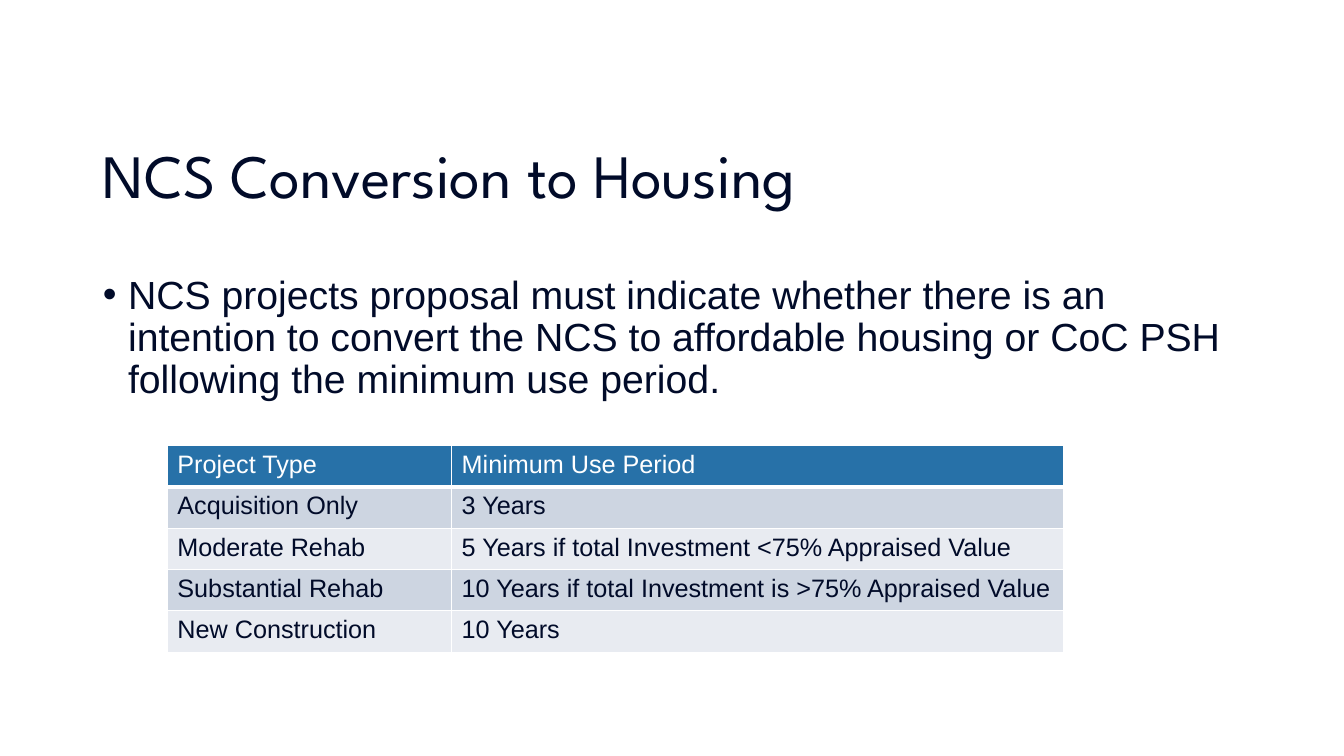
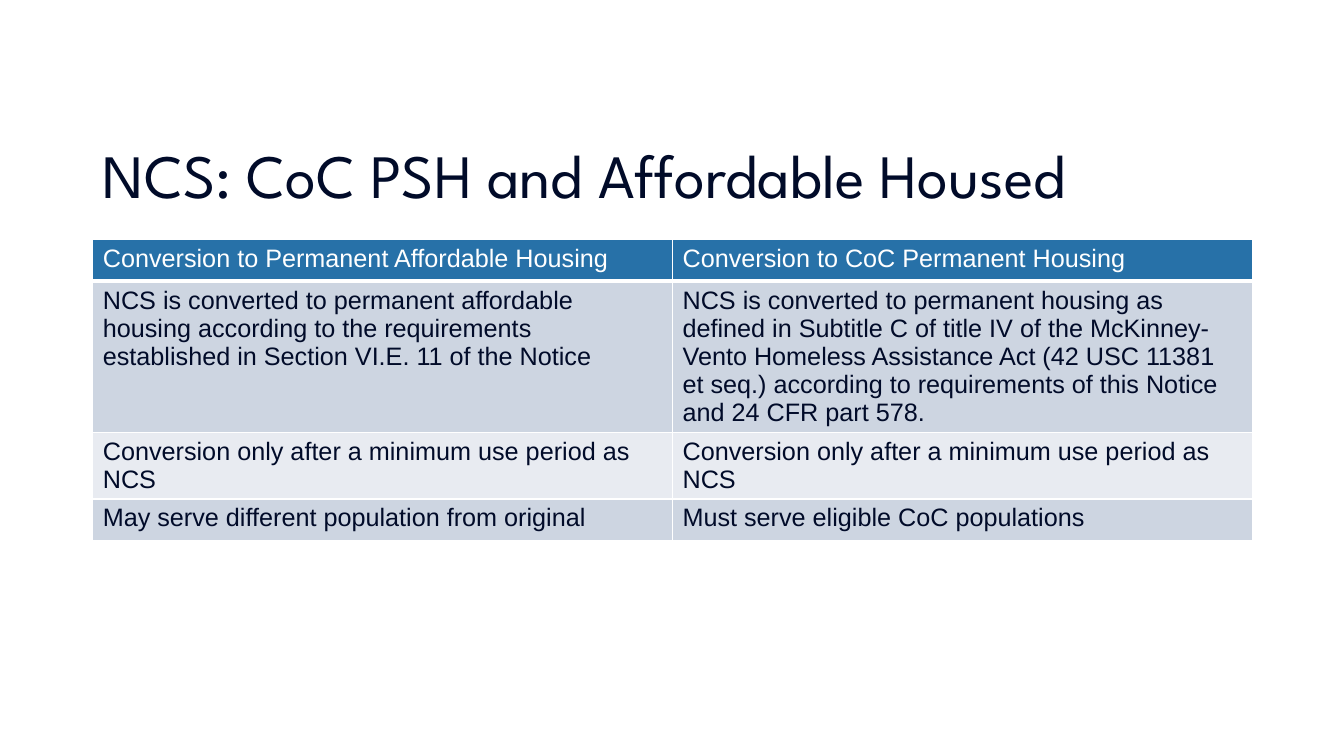
from dataclasses import dataclass

from lxml import etree
from pptx import Presentation
from pptx.dml.color import RGBColor
from pptx.enum.text import MSO_ANCHOR, MSO_AUTO_SIZE, PP_ALIGN
from pptx.oxml.ns import qn
from pptx.util import Inches, Pt

LEFT = PP_ALIGN.LEFT
MIDDLE, TOP = MSO_ANCHOR.MIDDLE, MSO_ANCHOR.TOP
NO_FIT = MSO_AUTO_SIZE.NONE

INK, WHITE, BLUE = "010B29", "FFFFFF", "2771A8"
BANDS = ("CDD5E1", "E8EBF1")
HEAD, TEXT = "League Spartan", "Arial"
EDGE, WIDTH = 0.92, 11.5
TITLE_ONLY, TITLE_BODY = 5, 1


@dataclass
class Grid:
    left: float
    top: float
    cols: tuple[float, ...]
    heights: tuple[float, ...]
    rows: list[tuple[str, ...]]


@dataclass
class Page:
    title: str
    grid: Grid
    bullet: str = ""


PAGES = [
    Page(
        "NCS Conversion to Housing",
        Grid(1.66, 4.42, (2.82, 6.07), (0.41,) * 5, [
            ("Project Type", "Minimum Use Period"),
            ("Acquisition Only", "3 Years"),
            ("Moderate Rehab",
             "5 Years if total Investment <75% Appraised Value"),
            ("Substantial Rehab",
             "10 Years if total Investment is >75% Appraised Value"),
            ("New Construction", "10 Years"),
        ]),
        "NCS projects proposal must indicate whether there is an intention "
        "to convert the NCS to affordable housing or CoC PSH following the "
        "minimum use period.",
    ),
    Page(
        "NCS: CoC PSH and Affordable Housed",
        Grid(EDGE, 2.38, (WIDTH / 2,) * 2, (0.41, 1.5, 0.66, 0.41), [
            ("Conversion to Permanent Affordable Housing",
             "Conversion to CoC Permanent Housing"),
            ("NCS is converted to permanent affordable housing according to "
             "the requirements established in Section VI.E. 11 of the Notice",
             "NCS is converted to permanent housing as defined in Subtitle C "
             "of title IV of the McKinney-Vento Homeless Assistance Act (42 "
             "USC 11381 et seq.) according to requirements of this Notice "
             "and 24 CFR part 578."),
            ("Conversion only after a minimum use period as NCS",) * 2,
            ("May serve different population from original",
             "Must serve eligible CoC populations"),
        ]),
    ),
]


def rgb(code: str) -> RGBColor:
    return RGBColor.from_string(code)


def style(para, face: str, size: float, color: str) -> None:
    para.alignment = LEFT
    para.font.name = face
    para.font.size = Pt(size)
    para.font.color.rgb = rgb(color)


def fill_holder(shape, text: str, top: float, height: float, anchor,
                face: str, size: float):
    """Place a placeholder, write its one paragraph and return it."""
    shape.left, shape.top = Inches(EDGE), Inches(top)
    shape.width, shape.height = Inches(WIDTH), Inches(height)
    frame = shape.text_frame
    frame.text = text
    frame.auto_size = NO_FIT
    frame.vertical_anchor = anchor
    para = frame.paragraphs[0]
    para.line_spacing = 0.9
    para.space_before = Pt(0)
    style(para, face, size, INK)
    return para


def add_bullet(slide, text: str) -> None:
    para = fill_holder(slide.placeholders[1], text, 2.68, 4.07, TOP, TEXT, 28)
    props = para._p.get_or_add_pPr()
    props.set("marL", str(Inches(0.25)))
    props.set("indent", str(Inches(-0.25)))


def add_edges(cell, base: float) -> None:
    """Draw white borders; base is the width of the bottom one in points."""
    props = cell._tc.get_or_add_tcPr()
    sides = {"lnL": 1, "lnR": 1, "lnT": 1, "lnB": base}
    for spot, (tag, width) in enumerate(sides.items()):
        line = etree.Element(qn(f"a:{tag}"), w=str(Pt(width)))
        solid = etree.SubElement(line, qn("a:solidFill"))
        etree.SubElement(solid, qn("a:srgbClr"), val=WHITE)
        props.insert(spot, line)


def add_grid(slide, grid: Grid) -> None:
    table = slide.shapes.add_table(
        len(grid.rows), len(grid.cols), Inches(grid.left), Inches(grid.top),
        Inches(sum(grid.cols)), Inches(sum(grid.heights))).table
    for col, width in zip(table.columns, grid.cols):
        col.width = Inches(width)
    for num, (row, height) in enumerate(zip(table.rows, grid.heights)):
        row.height = Inches(height)
        first = num == 0
        for cell, text in zip(row.cells, grid.rows[num]):
            cell.text = text
            cell.fill.solid()
            cell.fill.fore_color.rgb = rgb(
                BLUE if first else BANDS[(num - 1) % 2])
            add_edges(cell, 3 if first else 1)
            para = cell.text_frame.paragraphs[0]
            style(para, TEXT, 18, WHITE if first else INK)
            para.font.bold = False


def add_page(deck, page: Page) -> None:
    kind = TITLE_BODY if page.bullet else TITLE_ONLY
    slide = deck.slides.add_slide(deck.slide_layouts[kind])
    fill_holder(slide.shapes.title, page.title, 1.05, 1.45, MIDDLE, HEAD, 44)
    if page.bullet:
        add_bullet(slide, page.bullet)
    add_grid(slide, page.grid)


def main() -> None:
    deck = Presentation()
    deck.slide_width, deck.slide_height = Inches(13.33), Inches(7.5)
    for page in PAGES:
        add_page(deck, page)
    deck.save("out.pptx")


if __name__ == "__main__":
    main()
